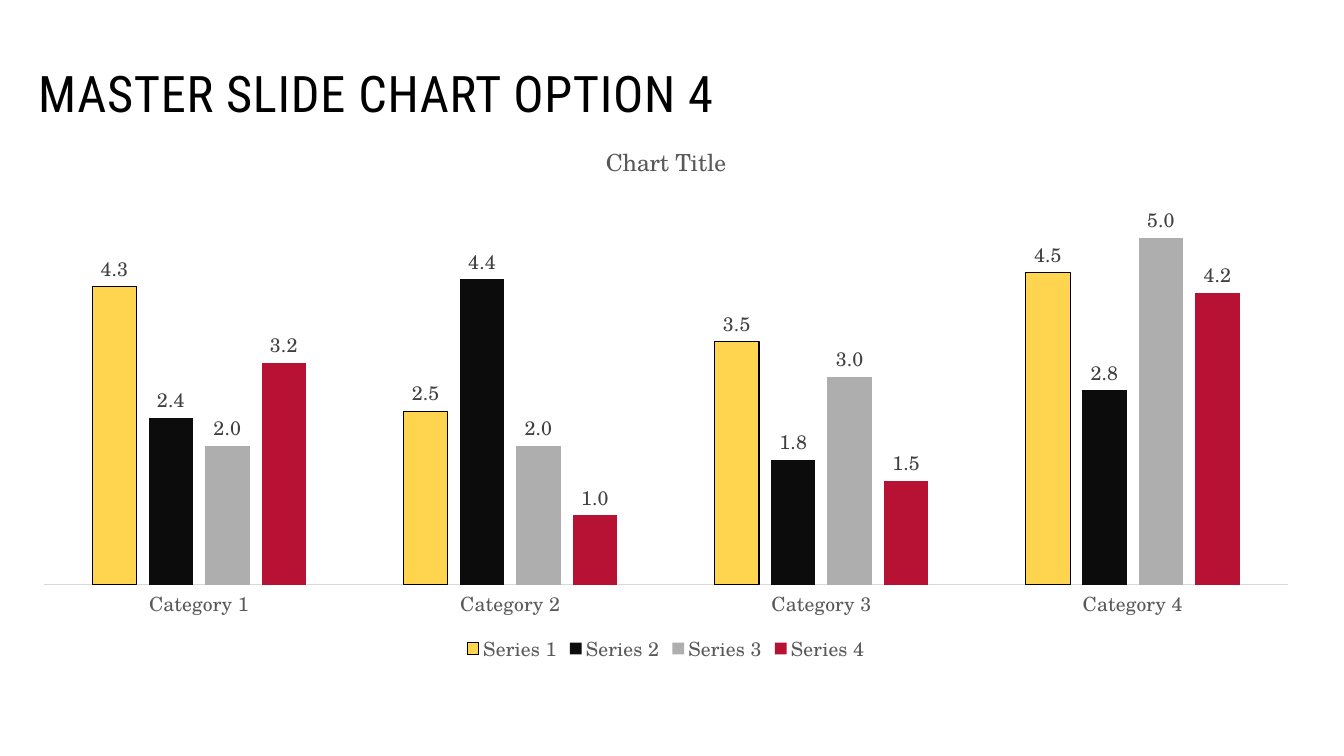
from lxml import etree
from pptx import Presentation
from pptx.chart.data import CategoryChartData as Data
from pptx.dml.color import RGBColor
from pptx.enum.chart import (XL_CHART_TYPE as Kind, XL_LABEL_POSITION as Spot,
                             XL_LEGEND_POSITION as Side, XL_TICK_MARK as Tick)
from pptx.enum.text import MSO_ANCHOR as Anchor
from pptx.oxml import parse_xml
from pptx.oxml.ns import nsdecls, qn
from pptx.util import Inches, Pt

HEAD, BODY = "Roboto Condensed", "TeX Gyre Schola"
CATS = [f"Category {n}" for n in range(1, 5)]
ROWS = [
    ("Series 1", (4.3, 2.5, 3.5, 4.5), "FFD54F"),
    ("Series 2", (2.4, 4.4, 1.8, 2.8), "0C0C0C"),
    ("Series 3", (2, 2, 3, 5), "AEAEAE"),
    ("Series 4", (3.2, 1, 1.5, 4.2), "B71233"),
]


def color(text):
    """Return a colour from a hex string."""
    return RGBColor.from_string(text)


def style(font, name, size, tint):
    """Set the face, size and colour of a font."""
    font.name, font.size, font.bold = name, Pt(size), False
    font.color.rgb = color(tint)


def outline(line, tint):
    """Draw a thin line in one colour."""
    line.color.rgb = color(tint)
    line.width = Pt(0.75)


def add_title(slide, text):
    """Add the slide heading."""
    box = slide.shapes.add_textbox(Inches(0.28), Inches(0.47), Inches(12.65), Inches(0.98))
    frame = box.text_frame
    frame.word_wrap = True
    frame.vertical_anchor = Anchor.MIDDLE
    para = frame.paragraphs[0]
    para.line_spacing = 0.85
    run = para.add_run()
    run.text = text
    style(para.font, HEAD, 36, "000000")
    run.font._element.set("spc", "50")


def set_plot(chart):
    """Fix the inner plot area inside the chart."""
    parts = zip("xywh", (0.012, 0.085, 0.976, 0.764))
    modes = "".join(f'<c:{k}Mode val="edge"/>' for k in "xy")
    sizes = "".join(f'<c:{k} val="{v}"/>' for k, v in parts)
    layout = parse_xml(
        f'<c:layout {nsdecls("c")}><c:manualLayout><c:layoutTarget val="inner"/>'
        f'{modes}{sizes}</c:manualLayout></c:layout>')
    area = chart._chartSpace.chart.plotArea
    for old in area.findall(qn("c:layout")):
        area.remove(old)
    area.insert(0, layout)


def set_axes(chart):
    """Style the category axis and hide the value axis."""
    axis = chart.category_axis
    axis.major_tick_mark = axis.minor_tick_mark = Tick.NONE
    style(axis.tick_labels.font, BODY, 14, "595959")
    outline(axis.format.line, "D9D9D9")
    scale = chart.value_axis
    scale.minimum_scale, scale.maximum_scale = 0, 6
    scale.has_major_gridlines = False
    scale.visible = False


def set_bars(plot):
    """Colour the bars and label their values."""
    plot.gap_width, plot.overlap = 219, -27
    plot.vary_by_categories = False
    for bar, (_, _, tint) in zip(plot.series, ROWS):
        bar.format.fill.solid()
        bar.format.fill.fore_color.rgb = color(tint)
        bar.invert_if_negative = False
        tags = bar.data_labels
        tags.show_value = True
        tags.position = Spot.OUTSIDE_END
        tags.number_format, tags.number_format_is_linked = "0.0", False
        style(tags.font, BODY, 14, "404040")
    outline(plot.series[0].format.line, "000000")


def add_bars(slide):
    """Add the clustered column chart."""
    data = Data(number_format="0.0")
    data.categories = CATS
    for name, vals, _ in ROWS:
        data.add_series(name, vals)
    chart = slide.shapes.add_chart(
        Kind.COLUMN_CLUSTERED, Inches(0.28), Inches(1.21),
        Inches(12.65), Inches(5.41), data).chart
    style(chart.font, BODY, 14, "000000")
    chart.has_title = True
    para = chart.chart_title.text_frame.paragraphs[0]
    para.add_run().text = "Chart Title"
    style(para.font, BODY, 16.8, "595959")
    chart.chart_title.include_in_layout = False
    chart.has_legend = True
    chart.legend.position = Side.BOTTOM
    chart.legend.include_in_layout = False
    style(chart.legend.font, BODY, 14, "595959")
    set_plot(chart)
    set_axes(chart)
    set_bars(chart.plots[0])


def main():
    """Build and save the slide."""
    deck = Presentation()
    deck.slide_width, deck.slide_height = Inches(13.33), Inches(7.5)
    slide = deck.slides.add_slide(deck.slide_layouts[6])
    add_bars(slide)
    add_title(slide, "MASTER SLIDE CHART OPTION 4")
    deck.save("out.pptx")


if __name__ == "__main__":
    main()
